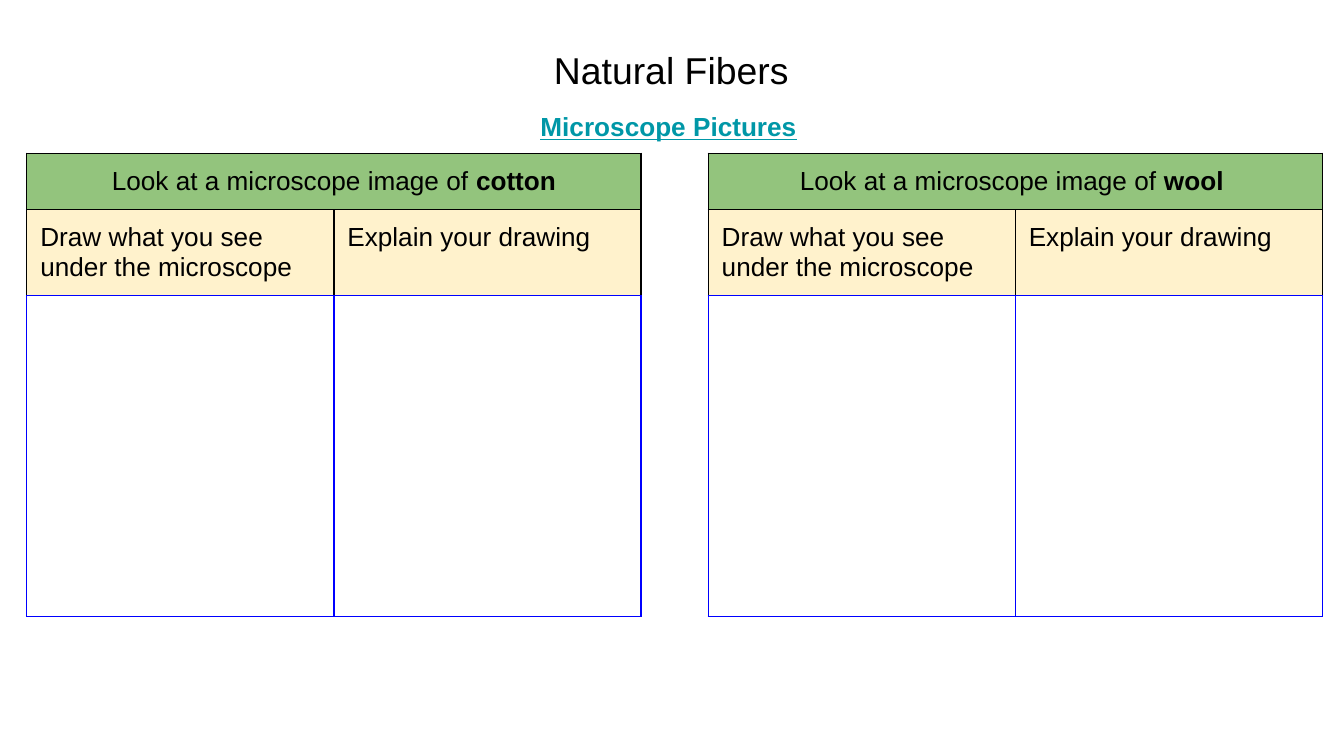
from lxml import etree
from pptx import Presentation
from pptx.dml.color import RGBColor
from pptx.enum.text import MSO_ANCHOR, PP_ALIGN
from pptx.oxml.ns import qn
from pptx.util import Inches, Pt

CENTER, LEFT = PP_ALIGN.CENTER, PP_ALIGN.LEFT
TOP = MSO_ANCHOR.TOP

BLACK = RGBColor(0x00, 0x00, 0x00)
BLUE = RGBColor(0x00, 0x00, 0xFF)
TEAL = RGBColor(0x00, 0x97, 0xA7)
GREEN = RGBColor(0x93, 0xC4, 0x7D)
CREAM = RGBColor(0xFF, 0xF2, 0xCC)

TABLE_WIDTH = 4.57
ROW_HEIGHTS = (0.42, 0.64, 2.39)
# Fill, side and top line, bottom line of each row
ROW_STYLES = ((GREEN, BLACK, BLACK), (CREAM, BLACK, BLUE), (None, BLUE, BLUE))
PROMPTS = ("Draw what you see under the microscope", "Explain your drawing")


def add_text(para, text, size=14, color=BLACK, bold=False, underline=False,
             align=LEFT, font="Arial"):
    para.alignment = align
    span = para.add_run()
    span.text = text
    span.font.name = font
    span.font.size = Pt(size)
    span.font.bold = bold
    span.font.underline = underline
    span.font.color.rgb = color


def set_borders(cell, upper, bottom):
    properties = cell._tc.get_or_add_tcPr()
    edges = {"a:lnL": upper, "a:lnR": upper, "a:lnT": upper, "a:lnB": bottom}
    for tag, color in edges.items():
        line = etree.SubElement(properties, qn(tag), w=str(Pt(0.75)))
        fill = etree.SubElement(line, qn("a:solidFill"))
        etree.SubElement(fill, qn("a:srgbClr"), val=str(color))


class Worksheet:
    def __init__(self, page, inset=0.1):
        self.page = page
        self.inset = Inches(inset)

    def set_insets(self, holder):
        holder.margin_left = holder.margin_right = self.inset
        holder.margin_top = holder.margin_bottom = self.inset

    def heading(self, text, left, top, width, height, **style):
        box = self.page.shapes.add_textbox(
            Inches(left), Inches(top), Inches(width), Inches(height))
        frame = box.text_frame
        frame.word_wrap = True
        frame.vertical_anchor = TOP
        self.set_insets(frame)
        add_text(frame.paragraphs[0], text, align=CENTER, **style)

    def fiber_table(self, fiber, left, top):
        table = self.page.shapes.add_table(
            len(ROW_HEIGHTS), len(PROMPTS), Inches(left), Inches(top),
            Inches(TABLE_WIDTH), Inches(sum(ROW_HEIGHTS))).table
        table.first_row = table.horz_banding = False
        for row, height in zip(table.rows, ROW_HEIGHTS):
            row.height = Inches(height)

        # Borders and fills
        for row, (fill, upper, bottom) in zip(table.rows, ROW_STYLES):
            for cell in row.cells:
                self.set_insets(cell)
                set_borders(cell, upper, bottom)
                if fill is None:
                    cell.fill.background()
                else:
                    cell.fill.solid()
                    cell.fill.fore_color.rgb = fill

        # Header and prompts
        header = table.cell(0, 0)
        header.merge(table.cell(0, 1))
        para = header.text_frame.paragraphs[0]
        add_text(para, "Look at a microscope image of ", align=CENTER)
        add_text(para, fiber, bold=True, align=CENTER)
        for column, prompt in enumerate(PROMPTS):
            add_text(table.cell(1, column).text_frame.paragraphs[0], prompt)


def main():
    # Wide page, 16 to 9
    deck = Presentation()
    deck.slide_width = Inches(10)
    deck.slide_height = deck.slide_width * 9 // 16
    sheet = Worksheet(deck.slides.add_slide(deck.slide_layouts[6]))

    # Fiber tables
    sheet.fiber_table("cotton", 0.2, 1.14)
    sheet.fiber_table("wool ", 5.27, 1.14)

    # Headings
    sheet.heading("Natural Fibers", 3.7, 0.25, 2.59, 0.54, size=20)
    sheet.heading("Microscope Pictures", 2.74, 0.72, 4.47, 0.27,
                  color=TEAL, bold=True, underline=True)

    deck.save("out.pptx")


if __name__ == "__main__":
    main()
